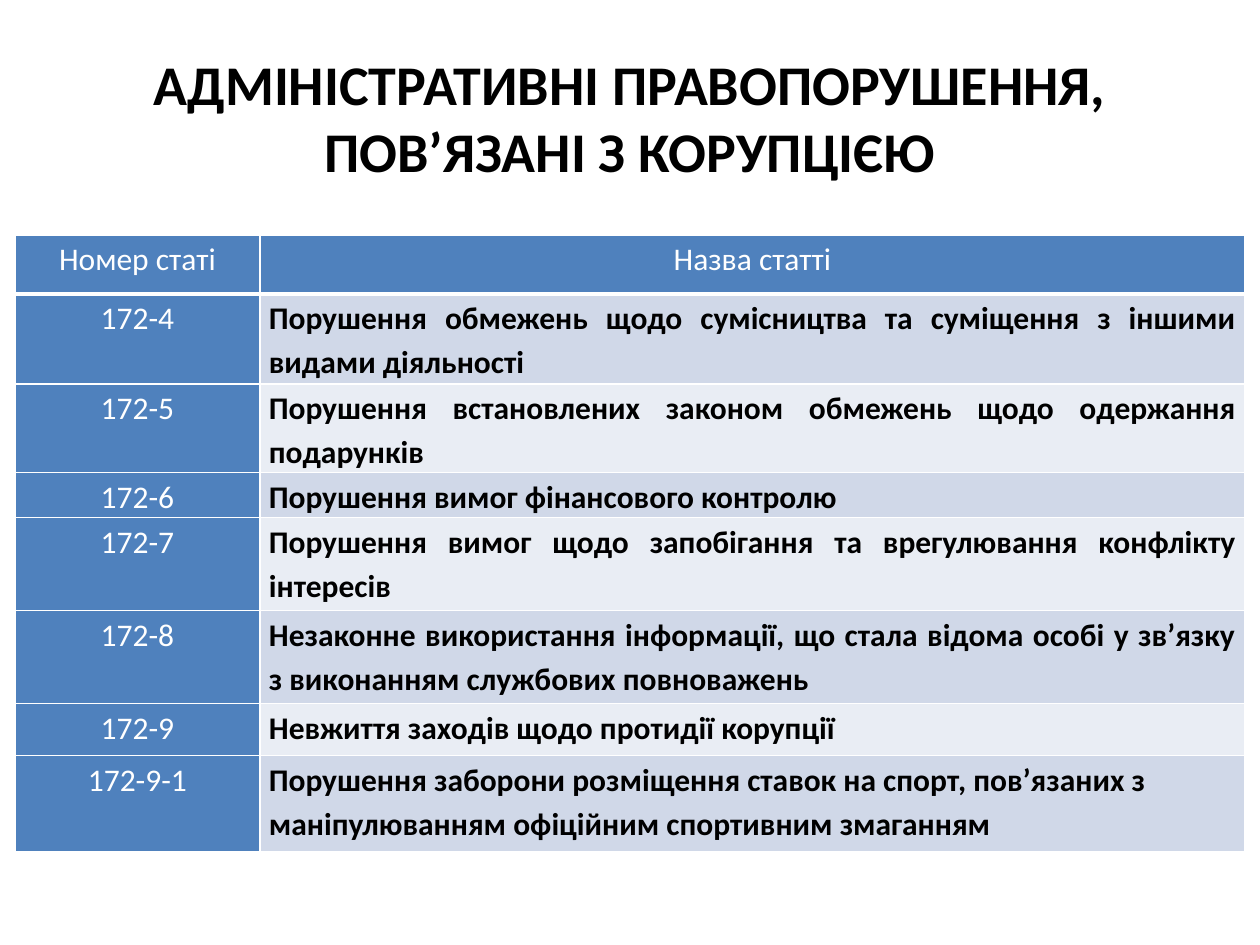
from lxml.etree import SubElement
from pptx import Presentation
from pptx.dml.color import RGBColor
from pptx.enum.text import MSO_ANCHOR as Anchor, PP_ALIGN as Align
from pptx.oxml.ns import qn
from pptx.util import Emu, Pt

# Content
TITLE = "АДМІНІСТРАТИВНІ ПРАВОПОРУШЕННЯ, ПОВ’ЯЗАНІ З КОРУПЦІЄЮ"
HEADER = ("Номер статі", "Назва статті")
ARTICLES = [  # number, name, row height in px
    ("172-4", "Порушення обмежень щодо сумісництва та суміщення з іншими видами діяльності", 90),
    ("172-5", "Порушення встановлених законом обмежень щодо одержання подарунків", 88),
    ("172-6", "Порушення вимог фінансового контролю", 45),
    ("172-7", "Порушення вимог щодо запобігання та врегулювання конфлікту інтересів", 93),
    ("172-8", "Незаконне використання інформації, що стала відома особі у зв’язку "
              "з виконанням службових повноважень", 93),
    ("172-9", "Невжиття заходів щодо протидії корупції", 52),
    ("172-9-1", "Порушення заборони розміщення ставок на спорт, пов’язаних з "
                "маніпулюванням офіційним спортивним змаганням", 96),
]
HEADER_HEIGHT = 59
COLUMNS = (245, 985)
BLUE, WHITE, BLACK = "4F81BD", "FFFFFF", "000000"
BANDS = ("D0D8E8", "E9EDF4")


def px(value):
    return Emu(value * 914400 // 126)


def color(value):
    return RGBColor.from_string(value)


def write(frame, text, size=18, ink=BLACK, bold=False, align=Align.CENTER, spacing=None):
    para = frame.paragraphs[0]
    para.alignment = align
    para.line_spacing = spacing
    span = para.add_run()
    span.text = text
    span.font.name = "Calibri"
    span.font.size = Pt(size)
    span.font.bold = bold
    span.font.color.rgb = color(ink)


def draw_borders(cell, bottom=1):
    properties = cell._tc.get_or_add_tcPr()
    for side, width in (("L", 1), ("R", 1), ("T", 1), ("B", bottom)):
        line = SubElement(properties, qn(f"a:ln{side}"), w=str(Pt(width)))
        fill = SubElement(line, qn("a:solidFill"))
        SubElement(fill, qn("a:srgbClr"), val=WHITE)


def fill_cell(cell, text, fill, bottom=1, **text_format):
    cell.margin_left = cell.margin_right = px(9)
    cell.margin_top = cell.margin_bottom = 0
    draw_borders(cell, bottom)
    cell.fill.solid()
    cell.fill.fore_color.rgb = color(fill)
    write(cell.text_frame, text, spacing=1.15, **text_format)


deck = Presentation()
deck.slide_width, deck.slide_height = px(1260), px(945)
page = deck.slides.add_slide(deck.slide_layouts[5])

# Title
title = page.shapes.title
title.left, title.top, title.width, title.height = px(63), px(38), px(1134), px(158)
title.text_frame.word_wrap = True
title.text_frame.vertical_anchor = Anchor.MIDDLE
write(title.text_frame, TITLE, size=32, bold=True)

# Table grid
heights = [HEADER_HEIGHT] + [height for _, _, height in ARTICLES]
table = page.shapes.add_table(len(heights), len(COLUMNS), px(15), px(235),
                              px(sum(COLUMNS)), px(sum(heights))).table
for column, width in zip(table.columns, COLUMNS):
    column.width = px(width)
for row, height in zip(table.rows, heights):
    row.height = px(height)

# Header row
for index, text in enumerate(HEADER):
    fill_cell(table.cell(0, index), text, BLUE, bottom=3, ink=WHITE)

# Article rows; the last name is not justified
for index, (number, name, _) in enumerate(ARTICLES):
    align = Align.LEFT if index == len(ARTICLES) - 1 else Align.JUSTIFY
    fill_cell(table.cell(index + 1, 0), number, BLUE, ink=WHITE)
    fill_cell(table.cell(index + 1, 1), name, BANDS[index % 2], bold=True, align=align)

deck.save("out.pptx")
